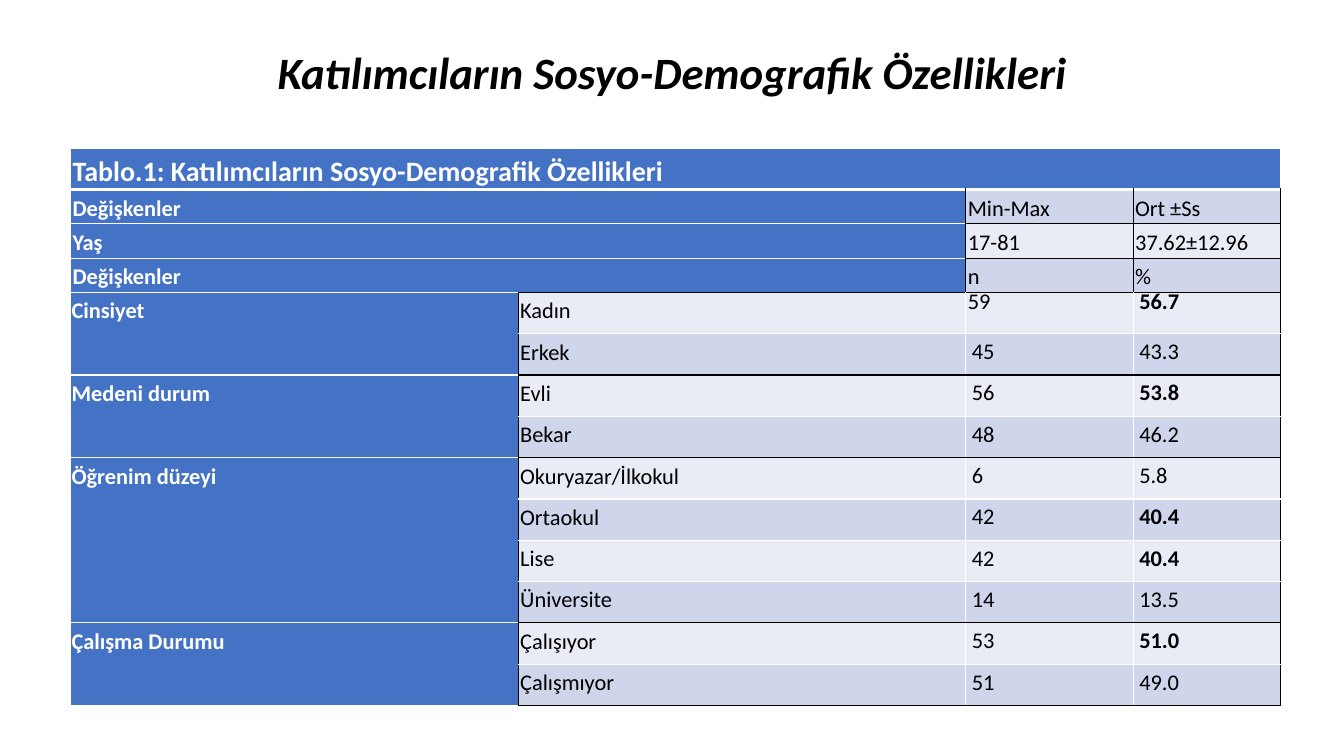
import pptx
import pptx.dml.color
import pptx.enum.text
import pptx.oxml.ns
import pptx.util
from lxml import etree

Inches, Pt = pptx.util.Inches, pptx.util.Pt
RGB = pptx.dml.color.RGBColor.from_string
ANCHOR = pptx.enum.text.MSO_ANCHOR
COLORS = {"blue": "4472C4", "dark band": "CFD5EA", "light band": "E9EBF5",
          "black": "000000", "white": "FFFFFF"}
TITLE = "Katılımcıların Sosyo-Demografik Özellikleri"
SUMMARY = [("Değişkenler", "Min-Max", "Ort ±Ss"),
           ("Yaş", "17-81", "37.62±12.96"),
           ("Değişkenler", "n", "%")]
GROUPS = {
    "Cinsiyet": [("Kadın", "59", "56.7"), ("Erkek", "45", "43.3")],
    "Medeni durum": [("Evli", "56", "53.8"), ("Bekar", "48", "46.2")],
    "Öğrenim düzeyi": [("Okuryazar/İlkokul", "6", "5.8"), ("Ortaokul", "42", "40.4"),
                       ("Lise", "42", "40.4"), ("Üniversite", "14", "13.5")],
    "Çalışma Durumu": [("Çalışıyor", "53", "51.0"), ("Çalışmıyor", "51", "49.0")],
}
COL_WIDTHS = [4.44, 4.44, 1.66, 1.46]
ROW_HEIGHTS = [0.39] + [0.34] * 3 + [0.41] * 10


def style_cell(cell, fill, black="", thick=""):
    """Fill the cell and rule its edges; black and thick name edges by L, R, T, B."""
    tcPr = cell._tc.get_or_add_tcPr()
    for edge in "LRTB":
        ln = etree.SubElement(tcPr, pptx.oxml.ns.qn(f"a:ln{edge}"),
                              w=str(Pt(3 if edge in thick else 1)))
        solid = etree.SubElement(ln, pptx.oxml.ns.qn("a:solidFill"))
        etree.SubElement(solid, pptx.oxml.ns.qn("a:srgbClr"),
                         val=COLORS["black" if edge in black else "white"])
    cell.fill.solid()
    cell.fill.fore_color.rgb = RGB(COLORS[fill])


def write_cell(cell, text, color="black", bold=False, size=16, spacing=1.15,
               left=0.02, right=0.05):
    margins = {"margin_left": left, "margin_right": right,
               "margin_top": 0.01, "margin_bottom": 0.01}
    for name, value in margins.items():
        setattr(cell, name, Inches(value))
    p = cell.text_frame.paragraphs[0]
    p.line_spacing = spacing
    r = p.add_run()
    r.text = text
    for name, value in {"name": "Calibri", "size": Pt(size), "bold": bold}.items():
        setattr(r.font, name, value)
    r.font.color.rgb = RGB(COLORS[color])


prs = pptx.Presentation()
prs.slide_width, prs.slide_height = Inches(13.33), Inches(7.5)
s = prs.slides.add_slide(prs.slide_layouts[5])

# Title
title = s.shapes.title
title.left, title.top, title.width, title.height = map(Inches, (0.92, 0.4, 11.5, 0.69))
title.text_frame.vertical_anchor = ANCHOR.MIDDLE
p = title.text_frame.paragraphs[0]
p.alignment = pptx.enum.text.PP_ALIGN.CENTER
p.line_spacing = 0.9
r = p.add_run()
r.text = TITLE
for name, value in {"name": "Calibri", "size": Pt(32), "bold": True, "italic": True}.items():
    setattr(r.font, name, value)
r.font.color.rgb = RGB(COLORS["black"])

# Table grid
table = s.shapes.add_table(len(ROW_HEIGHTS), len(COL_WIDTHS), Inches(0.7), Inches(1.47),
                           Inches(sum(COL_WIDTHS)), Inches(sum(ROW_HEIGHTS))).table
table.horz_banding = False
for column, width in zip(table.columns, COL_WIDTHS):
    column.width = Inches(width)
for row, height in zip(table.rows, ROW_HEIGHTS):
    row.height = Inches(height)

# Caption row
for col in range(4):
    style_cell(table.cell(0, col), "blue", thick="B")
table.cell(0, 0).merge(table.cell(0, 3))
write_cell(table.cell(0, 0), f"Tablo.1: {TITLE}", "white", True, 20)

# Summary rows
for row, (label, *values) in enumerate(SUMMARY, 1):
    thick = "T" if row == 1 else ""
    band = "dark band" if row % 2 else "light band"
    for col in range(2):
        style_cell(table.cell(row, col), "blue", thick=thick)
    table.cell(row, 0).merge(table.cell(row, 1))
    write_cell(table.cell(row, 0), label, "white", True)
    for col, text in enumerate(values, 2):
        style_cell(table.cell(row, col), band, "LRB" if thick else "LRTB", thick)
        write_cell(table.cell(row, col), text)

# Groups of categories, the largest share in bold
row = first_row = len(SUMMARY) + 1
for label, categories in GROUPS.items():
    top, bottom = row, row + len(categories) - 1
    largest = max(float(percent) for _, _, percent in categories)
    for category, count, percent in categories:
        band = "dark band" if row % 2 else "light band"
        ends = ("T" if row == top else "") + ("B" if row == bottom else "")
        style_cell(table.cell(row, 0), "blue")
        style_cell(table.cell(row, 1), band, "L" + ends)
        write_cell(table.cell(row, 1), category)
        for col, text in ((2, count), (3, percent)):
            cell = table.cell(row, col)
            style_cell(cell, band, ends + ("R" if col == 3 else ""))
            write_cell(cell, text, bold=col == 3 and float(text) == largest, spacing=Pt(16))
            if row > first_row:
                cell.vertical_anchor = ANCHOR.MIDDLE
            if row > first_row or col == 3:
                pPr = cell.text_frame.paragraphs[0]._p.get_or_add_pPr()
                pPr.set("marL", str(Inches(0.04)))
        row += 1
    table.cell(top, 0).merge(table.cell(bottom, 0))
    write_cell(table.cell(top, 0), label, "white", True, left=0.01, right=0.01)

prs.save("out.pptx")
